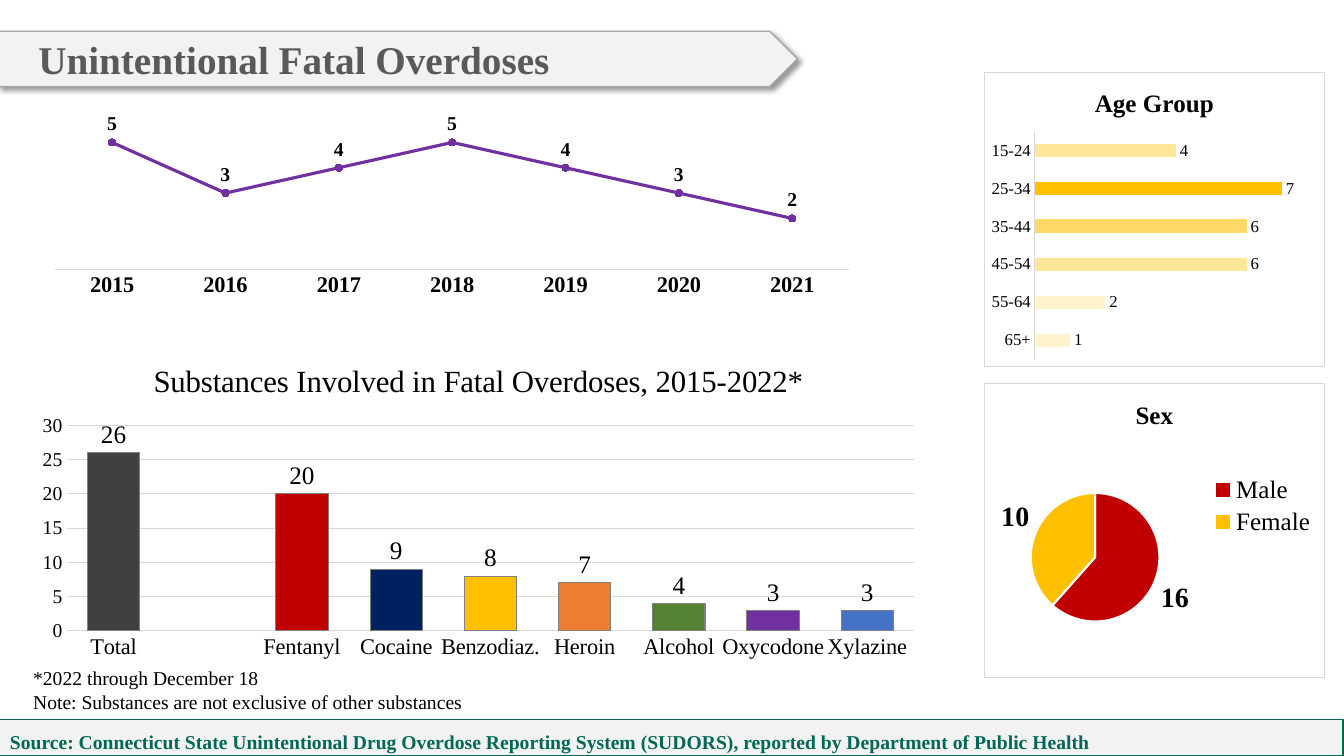
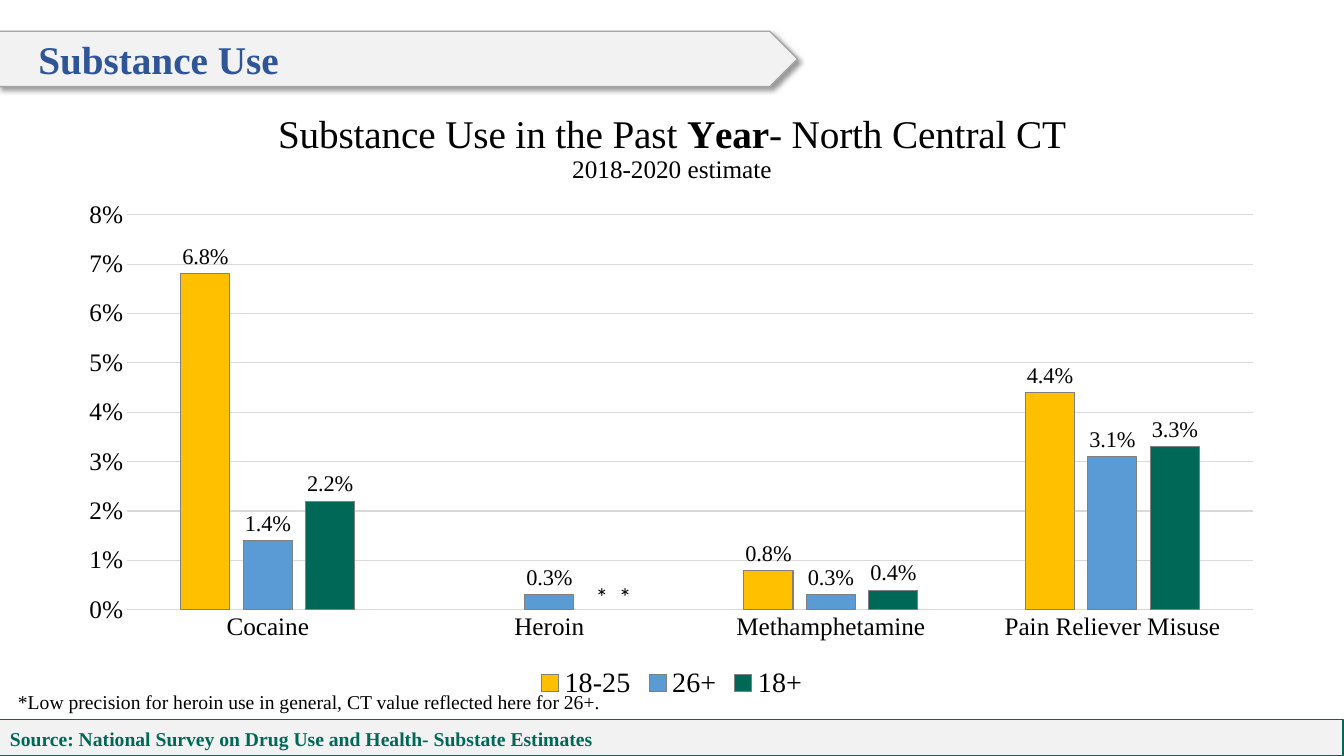
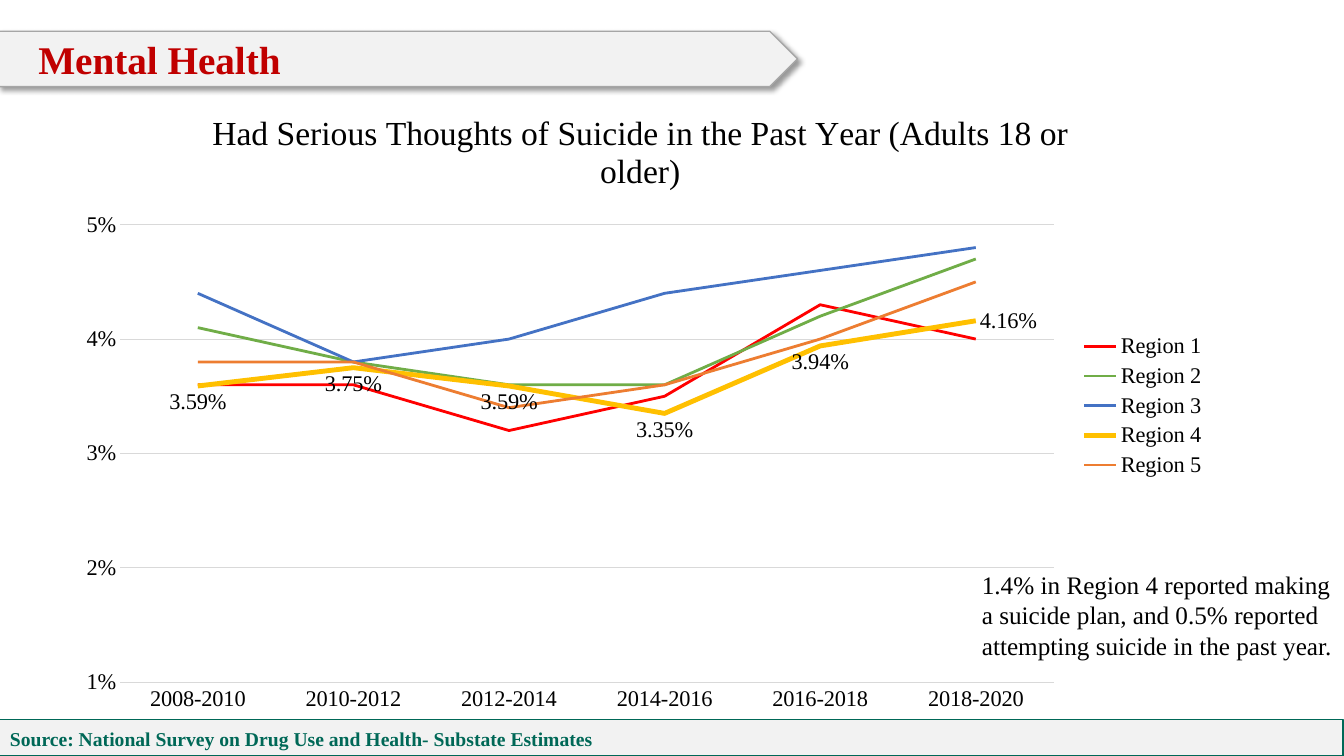
from lxml.etree import SubElement
from pptx import Presentation
from pptx.chart.data import CategoryChartData
from pptx.dml.color import RGBColor
from pptx.enum.chart import (XL_CHART_TYPE, XL_LABEL_POSITION, XL_LEGEND_POSITION,
                             XL_MARKER_STYLE, XL_TICK_MARK)
from pptx.enum.shapes import MSO_SHAPE
from pptx.enum.text import MSO_ANCHOR
from pptx.oxml import parse_xml
from pptx.oxml.ns import nsdecls, qn
from pptx.util import Emu, Pt

PX = 9144  # 100 px to the inch
WIDTH, HEIGHT = 1333, 750
SERIF = "Times New Roman"
COLORS = {
    "black": "000000", "white": "FFFFFF", "band": "F2F2F2", "band_line": "A6A6A6",
    "grid": "D9D9D9", "bar_line": "808080", "dark": "404040", "title_gray": "595959",
    "title_blue": "2F5597", "green": "006857", "crimson": "C00000", "navy": "002060",
    "gold": "FFC000", "gold_mid": "FFD966", "gold_light": "FFE699", "gold_pale": "FFF2CC",
    "orange": "ED7D31", "forest": "548235", "purple": "7030A0", "blue": "4472C4",
    "sky": "5B9BD5", "red": "FF0000", "leaf": "70AD47",
}
TITLE_BAND = (-2, 31, 793, 55)
FOOTER_BAND = (-1, 714, 1333, 36)
SURVEY = "Source: National Survey on Drug Use and Health- Substate Estimates"


def emu(box):
    return [Emu(length * PX) for length in box]


def color(name):
    return RGBColor.from_string(COLORS[name])


def style_font(font, size, bold=False, ink="black", face=SERIF):
    font.name = face
    font.size = Pt(size)
    font.bold = bold
    font.color.rgb = color(ink)


def style_fill(target, name):
    target.fill.solid()
    target.fill.fore_color.rgb = color(name)


def style_line(line, name, width=0.75):
    line.color.rgb = color(name)
    line.width = Pt(width)


def add_text(slide, box, lines, size=14, **font):
    frame = slide.shapes.add_textbox(*emu(box)).text_frame
    frame.word_wrap = True
    frame.text = "\n".join(lines)
    for paragraph in frame.paragraphs:
        style_font(paragraph.runs[0].font, size, **font)


def add_band(slide, box, preset, line):
    shape = slide.shapes.add_shape(preset, *emu(box))
    shape.shadow.inherit = False
    style_fill(shape, "band")
    style_line(shape.line, line, 1)
    return shape


def add_title(slide, box, title, ink):
    band = add_band(slide, box, MSO_SHAPE.PENTAGON, "band_line")
    effects = band._element.spPr.find(qn("a:effectLst"))
    shadow = SubElement(effects, qn("a:outerShdw"), blurRad=str(Pt(4)), dist=str(Pt(3)),
                        dir="2700000", algn="tl", rotWithShape="0")
    tone = SubElement(shadow, qn("a:srgbClr"), val=COLORS["black"])
    SubElement(tone, qn("a:alpha"), val="40000")
    frame = band.text_frame
    frame.margin_left = Emu(40 * PX)
    frame.vertical_anchor = MSO_ANCHOR.MIDDLE
    frame.text = title
    paragraph = frame.paragraphs[0]
    paragraph.alignment = 1
    style_font(paragraph.runs[0].font, 28, True, ink)


def add_footer(slide, box, source, drop):
    """Draw the source band; drop is how far its text starts below the band's top."""
    add_band(slide, box, MSO_SHAPE.RECTANGLE, "green")
    left, top = box[:2]
    add_text(slide, (left + 1, top + drop, 1163, 34), [source], bold=True, ink="green")


def manual_layout(box, part, inner=False):
    """Return a layout that puts part, given inside the chart, at fixed fractions of box."""
    left, top, width, height = part
    target = '<c:layoutTarget val="inner"/>' if inner else ""
    values = {"x": left / box[2], "y": top / box[3], "w": width / box[2], "h": height / box[3]}
    modes = "".join(f'<c:{axis}Mode val="edge"/>' for axis in "xy")
    sizes = "".join(f'<c:{key} val="{value:.4f}"/>' for key, value in values.items())
    return parse_xml(f'<c:layout {nsdecls("c")}><c:manualLayout>{target}{modes}{sizes}'
                     "</c:manualLayout></c:layout>")


def remove_layout(element):
    for layout in element.findall(qn("c:layout")):
        element.remove(layout)


def add_chart(slide, box, kind, categories, series, plot, number_format="General", border=False):
    data = CategoryChartData(number_format=number_format)
    data.categories = categories
    for name, values in series:
        data.add_series(name, values)
    chart = slide.shapes.add_chart(kind, *emu(box), data).chart
    style_font(chart.font, 10)
    chart.has_title = False
    chart.has_legend = False
    chart.plots[0].vary_by_categories = kind == XL_CHART_TYPE.PIE
    space = chart._chartSpace
    area = space.chart.plotArea
    remove_layout(area)
    area.insert(0, manual_layout(box, plot, inner=True))
    stroke = (f'<a:solidFill><a:srgbClr val="{COLORS["grid"]}"/></a:solidFill>'
              if border else "<a:noFill/>")
    space.chart.addnext(parse_xml(f'<c:spPr {nsdecls("c", "a")}><a:noFill/>'
                                  f'<a:ln w="9525">{stroke}</a:ln></c:spPr>'))
    return chart


def add_chart_title(chart, *paragraphs):
    """Each paragraph is a list of (text, size, bold) runs."""
    chart.has_title = True
    frame = chart.chart_title.text_frame
    for index, runs in enumerate(paragraphs):
        paragraph = frame.add_paragraph() if index else frame.paragraphs[0]
        for text, size, bold in runs:
            run = paragraph.add_run()
            run.text = text
            style_font(run.font, size, bold)


def add_legend(chart, position, size):
    chart.has_legend = True
    chart.legend.position = position
    chart.legend.include_in_layout = False
    style_font(chart.legend.font, size)


def style_category_axis(chart, size, bold=False):
    axis = chart.category_axis
    axis.major_tick_mark = axis.minor_tick_mark = XL_TICK_MARK.NONE
    axis.has_major_gridlines = False
    style_font(axis.tick_labels.font, size, bold)
    style_line(axis.format.line, "grid")


def style_value_axis(chart, low, high, step, size=None, number_format="General"):
    """Scale the value axis; without a text size it is hidden."""
    axis = chart.value_axis
    axis.minimum_scale, axis.maximum_scale, axis.major_unit = low, high, step
    axis.major_tick_mark = axis.minor_tick_mark = XL_TICK_MARK.NONE
    axis.has_major_gridlines = axis.visible = size is not None
    if size:
        style_line(axis.major_gridlines.format.line, "grid")
        axis.format.line.fill.background()
        style_font(axis.tick_labels.font, size)
        axis.tick_labels.number_format = number_format
        axis.tick_labels.number_format_is_linked = False


def label_values(series, position, size, bold=False, number_format="General"):
    labels = series.data_labels
    labels.show_value = True
    labels.position = position
    labels.number_format = number_format
    labels.number_format_is_linked = False
    style_font(labels.font, size, bold)


def color_points(series, names):
    for index, name in enumerate(names):
        if name:
            style_fill(series.points[index].format, name)


def draw_trend(slide, box):
    chart = add_chart(slide, box, XL_CHART_TYPE.LINE_MARKERS,
                      [str(year) for year in range(2015, 2022)],
                      [("Series 1", (5, 3, 4, 5, 4, 3, 2))], (16, 4, 787, 151))
    style_category_axis(chart, 16, True)
    style_value_axis(chart, 0, 6, 1)
    series = chart.plots[0].series[0]
    series.smooth = False
    style_line(series.format.line, "purple", 2.25)
    series.marker.style = XL_MARKER_STYLE.CIRCLE
    series.marker.size = 5
    style_fill(series.marker.format, "purple")
    style_line(series.marker.format.line, "purple")
    label_values(series, XL_LABEL_POSITION.ABOVE, 14, True)


def draw_substances(slide, box):
    categories = ["Total", "", "Fentanyl", "Cocaine", "Benzodiaz.", "Heroin",
                  "Alcohol", "Oxycodone", "Xylazine"]
    chart = add_chart(slide, box, XL_CHART_TYPE.COLUMN_CLUSTERED, categories,
                      [("Series 1", (26, None, 20, 9, 8, 7, 4, 3, 3))], (42, 81, 841, 204))
    add_chart_title(chart, [("Substances Involved in Fatal Overdoses, 2015-2022*", 22, False)])
    style_category_axis(chart, 16)
    style_value_axis(chart, 0, 30, 5, 14)
    chart.plots[0].gap_width = 80
    chart.plots[0].overlap = -27
    series = chart.plots[0].series[0]
    style_fill(series.format, "dark")
    style_line(series.format.line, "bar_line")
    names = [None, None, "crimson", "navy", "gold", "orange", "forest", "purple", "blue"]
    color_points(series, names)
    for index, name in enumerate(names):
        if name:
            style_line(series.points[index].format.line, "bar_line")
    label_values(series, XL_LABEL_POSITION.OUTSIDE_END, 18)


def draw_age_groups(slide, box):
    chart = add_chart(slide, box, XL_CHART_TYPE.BAR_CLUSTERED,
                      ["15-24", "25-34", "35-44", "45-54", "55-64", "65+"],
                      [("Age Group", (4, 7, 6, 6, 2, 1))], (50, 59, 281, 227), border=True)
    add_chart_title(chart, [("Age Group", 18, True)])
    style_category_axis(chart, 12)
    chart.category_axis.reverse_order = True
    style_value_axis(chart, 0, 8, 1)
    chart.plots[0].gap_width = 182
    series = chart.plots[0].series[0]
    style_fill(series.format, "sky")
    color_points(series, ["gold_light", "gold", "gold_mid", "gold_light",
                          "gold_pale", "gold_pale"])
    label_values(series, XL_LABEL_POSITION.OUTSIDE_END, 12)


def draw_sex(slide, box):
    chart = add_chart(slide, box, XL_CHART_TYPE.PIE, ["Male", "Female"],
                      [("Series 1", (16, 10))], (46, 109, 128, 128), border=True)
    add_chart_title(chart, [("Sex", 18, True)])
    add_legend(chart, XL_LEGEND_POSITION.RIGHT, 18)
    legend = chart.legend._element
    remove_layout(legend)
    legend.find(qn("c:legendPos")).addnext(manual_layout(box, (222, 88, 110, 68)))
    series = chart.plots[0].series[0]
    color_points(series, ["crimson", "gold"])
    for index in range(2):
        style_line(series.points[index].format.line, "white", 1.5)
    label_values(series, XL_LABEL_POSITION.OUTSIDE_END, 20, True)


def draw_past_year_use(slide, box):
    chart = add_chart(slide, box, XL_CHART_TYPE.COLUMN_CLUSTERED,
                      ["Cocaine", "Heroin", "Methamphetamine", "Pain Reliever Misuse"],
                      [("18-25", (0.068, None, 0.008, 0.044)),
                       ("26+", (0.014, 0.003, 0.003, 0.031)),
                       ("18+", (0.022, None, 0.004, 0.033))],
                      (61, 123, 1117, 392), "0.0%")
    add_chart_title(chart,
                    [("Substance Use in the Past ", 28, False), ("Year", 28, True),
                     ("- North Central CT", 28, False)],
                    [("2018-2020 estimate", 18, False)])
    add_legend(chart, XL_LEGEND_POSITION.BOTTOM, 20)
    style_category_axis(chart, 18)
    style_value_axis(chart, 0, 0.08, 0.01, 18, "0%")
    chart.plots[0].gap_width = 219
    chart.plots[0].overlap = -27
    for series, name in zip(chart.plots[0].series, ("gold", "sky", "green")):
        style_fill(series.format, name)
        style_line(series.format.line, "bar_line")
        label_values(series, XL_LABEL_POSITION.OUTSIDE_END, 16, number_format="0.0%")


def draw_suicide_thoughts(slide, box):
    regions = [
        ("red", (0.036, 0.036, 0.032, 0.035, 0.043, 0.04)),
        ("leaf", (0.041, 0.038, 0.036, 0.036, 0.042, 0.047)),
        ("blue", (0.044, 0.038, 0.04, 0.044, 0.046, 0.048)),
        ("gold", (0.0359, 0.0375, 0.0359, 0.0335, 0.0394, 0.0416)),
        ("orange", (0.038, 0.038, 0.034, 0.036, 0.04, 0.045)),
    ]
    chart = add_chart(slide, box, XL_CHART_TYPE.LINE,
                      [f"{year}-{year + 2}" for year in range(2008, 2020, 2)],
                      [(f"Region {number}", values)
                       for number, (_, values) in enumerate(regions, 1)],
                      (56, 137, 926, 454), "0.00%")
    add_chart_title(chart, [("Had Serious Thoughts of Suicide in the Past Year "
                             "(Adults 18 or older)", 24, False)])
    add_legend(chart, XL_LEGEND_POSITION.RIGHT, 16)
    style_category_axis(chart, 16)
    style_value_axis(chart, 0.01, 0.05, 0.01, 16, "0%")
    for series, (name, _) in zip(chart.plots[0].series, regions):
        series.smooth = False
        style_line(series.format.line, name, 3.5 if name == "gold" else 2)
    region_four = chart.plots[0].series[3]
    label_values(region_four, XL_LABEL_POSITION.BELOW, 16, number_format="0.00%")
    last_label = region_four.points[5].data_label
    style_font(last_label.font, 16)
    last_label.position = XL_LABEL_POSITION.RIGHT


def build_overdoses(slide):
    add_title(slide, TITLE_BAND, "Unintentional Fatal Overdoses", "title_gray")
    add_footer(slide, FOOTER_BAND, "Source: Connecticut State Unintentional Drug Overdose "
               "Reporting System (SUDORS), reported by Department of Public Health", 5)
    draw_substances(slide, (24, 341, 901, 321))
    add_text(slide, (23, 656, 515, 57), ["*2022 through December 18",
             "Note: Substances are not exclusive of other substances"])
    draw_sex(slide, (976, 380, 338, 293))
    draw_age_groups(slide, (976, 71, 338, 293))
    draw_trend(slide, (39, 112, 820, 188))


def build_substance_use(slide):
    add_title(slide, TITLE_BAND, "Substance Use", "title_blue")
    draw_past_year_use(slide, (65, 90, 1203, 609))
    for left in (581, 604):
        add_text(slide, (left, 572, 46, 40), ["*"], 18, face="Calibri")
    add_text(slide, (8, 680, 934, 34),
             ["*Low precision for heroin use in general, CT value reflected here for 26+."])
    add_footer(slide, FOOTER_BAND, SURVEY, 2)


def build_mental_health(slide):
    add_title(slide, TITLE_BAND, "Mental Health", "crimson")
    draw_suicide_thoughts(slide, (63, 86, 1144, 633))
    add_text(slide, (964, 560, 370, 101),
             ["1.4% in Region 4 reported making a suicide plan, and 0.5% reported "
              "attempting suicide in the past year."], 18)
    add_footer(slide, FOOTER_BAND, SURVEY, 2)


def main():
    presentation = Presentation()
    presentation.slide_width, presentation.slide_height = emu((WIDTH, HEIGHT))
    for build in (build_overdoses, build_substance_use, build_mental_health):
        build(presentation.slides.add_slide(presentation.slide_layouts[6]))
    presentation.save("out.pptx")


if __name__ == "__main__":
    main()
